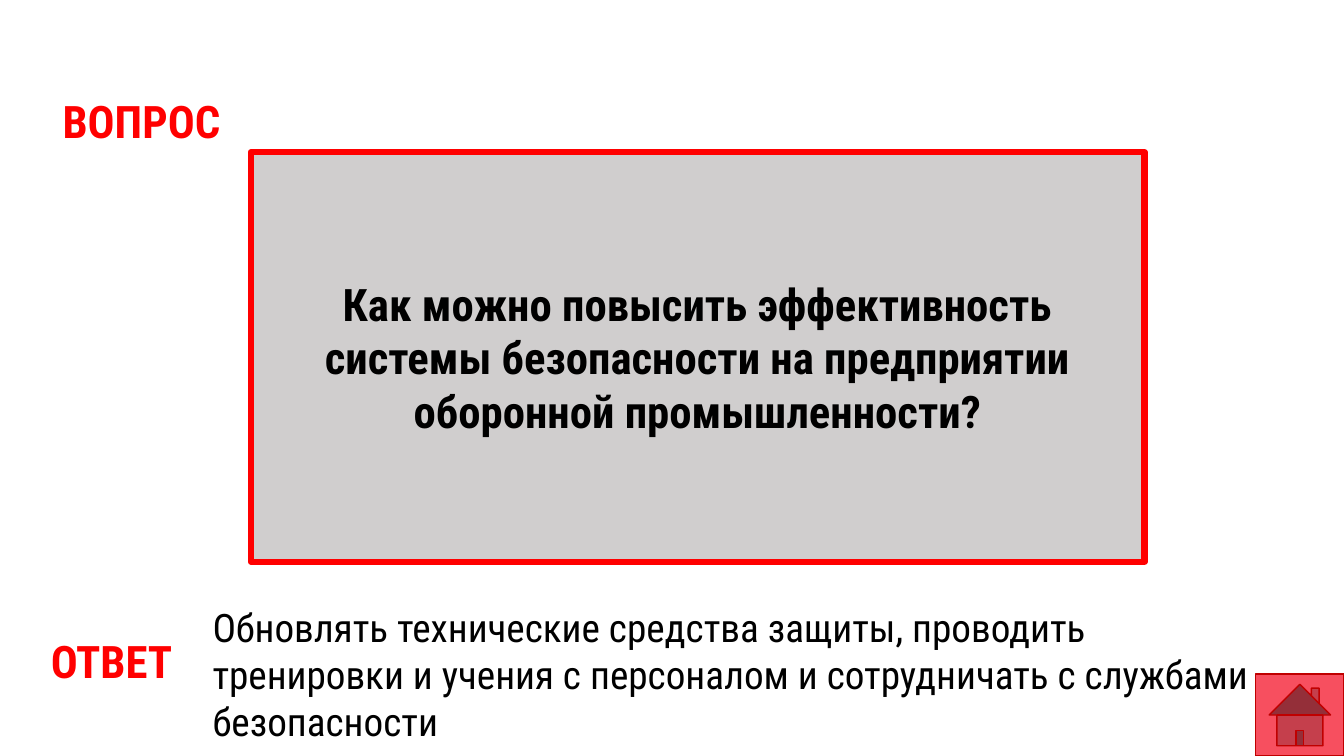
from pptx import Presentation
from pptx import util as u
from pptx.dml.color import RGBColor
from pptx.enum import shapes, text

PX = 9525
FONT = "Roboto Condensed"
RED = "FF0000"
BLACK = "000000"


def color(code):
    return RGBColor.from_string(code)


def scale(*sizes):
    return [u.Emu(size * PX) for size in sizes]


def write(shape, words, size, code, bold, align, anchor):
    frame = shape.text_frame
    frame.text = words
    frame.word_wrap = True
    frame.vertical_anchor = anchor
    para = frame.paragraphs[0]
    para.alignment = align
    for run in para.runs:
        run.font.name = FONT
        run.font.size = u.Pt(size)
        run.font.bold = bold
        run.font.color.rgb = color(code)


def label(shape, words, size=32, code=RED, bold=True):
    write(shape, words, size, code, bold,
          text.PP_ALIGN.LEFT, text.MSO_ANCHOR.TOP)
    shape.text_frame.auto_size = text.MSO_AUTO_SIZE.SHAPE_TO_FIT_TEXT


def head(slide, box, words):
    title = slide.shapes.title
    title.left, title.top, title.width, title.height = scale(*box)
    label(title, words)


def note(slide, box, words, **style):
    label(slide.shapes.add_textbox(*scale(*box)), words, **style)


def block(slide, kind, box, fill, line, width):
    shape = slide.shapes.add_shape(kind, *scale(*box))
    shape.shadow.inherit = False
    shape.fill.solid()
    shape.fill.fore_color.rgb = color(fill)
    shape.line.color.rgb = color(line)
    shape.line.width = u.Pt(width)
    return shape


def main():
    deck = Presentation()
    deck.slide_width, deck.slide_height = scale(1280, 720)
    slide = deck.slides.add_slide(deck.slide_layouts.get_by_name("Title Only"))
    kinds = shapes.MSO_SHAPE

    head(slide, (50, 84, 497, 61), "ВОПРОС")
    card = block(slide, kinds.RECTANGLE, (239, 145, 851, 390),
                 "D0CECE", RED, 4.5)
    write(card, "Как можно повысить эффективность системы безопасности "
          "на предприятии оборонной промышленности?", 32, BLACK, True,
          text.PP_ALIGN.CENTER, text.MSO_ANCHOR.MIDDLE)
    note(slide, (39, 599, 158, 61), "ОТВЕТ")
    note(slide, (193, 570, 1034, 100),
         "Обновлять технические средства защиты, проводить тренировки "
         "и учения с персоналом и сотрудничать с службами безопасности",
         size=28, code=BLACK, bold=False)
    block(slide, kinds.ACTION_BUTTON_HOME, (1196, 642, 84, 78),
          "F74F5F", "C00000", 1)

    deck.save("out.pptx")


if __name__ == "__main__":
    main()
